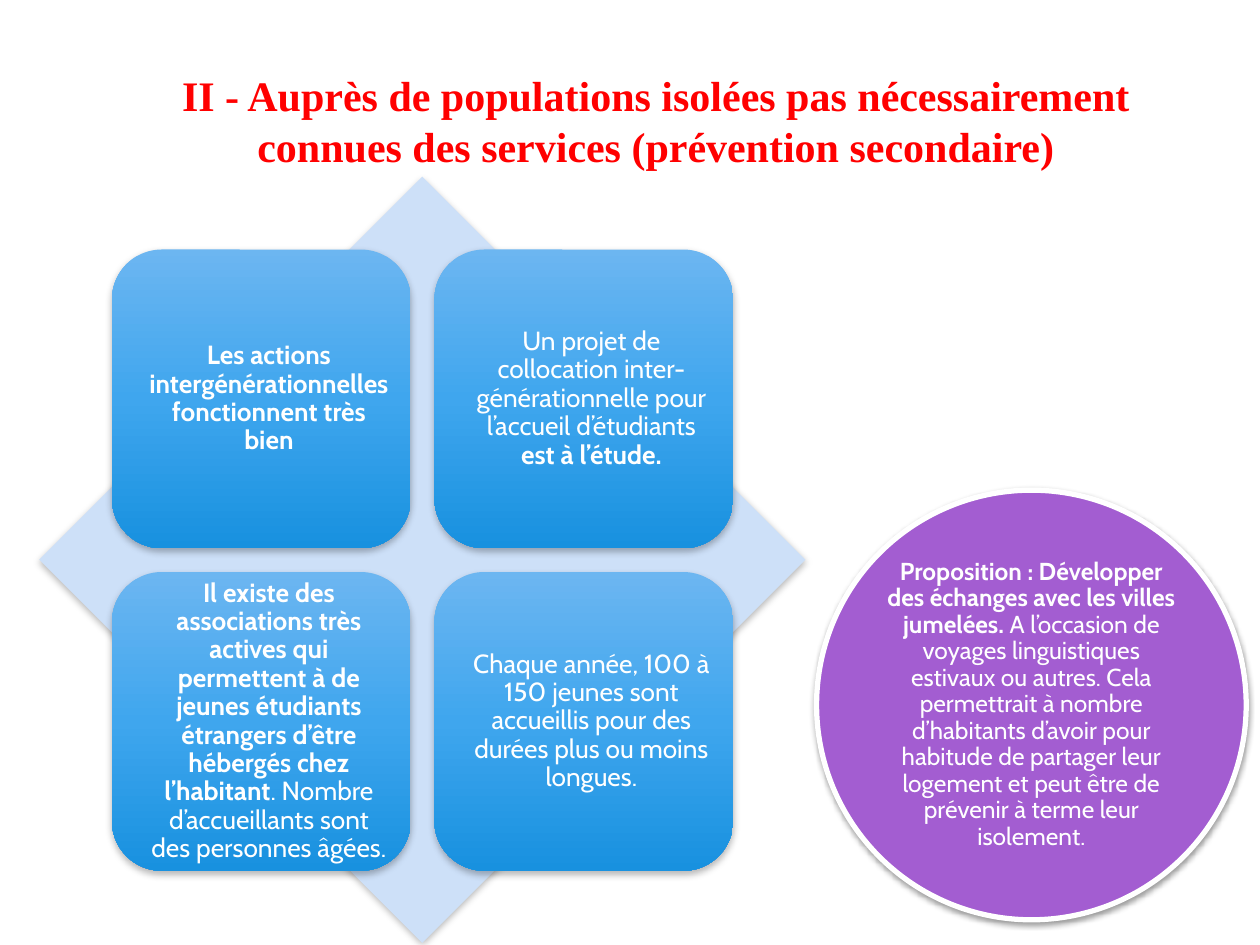
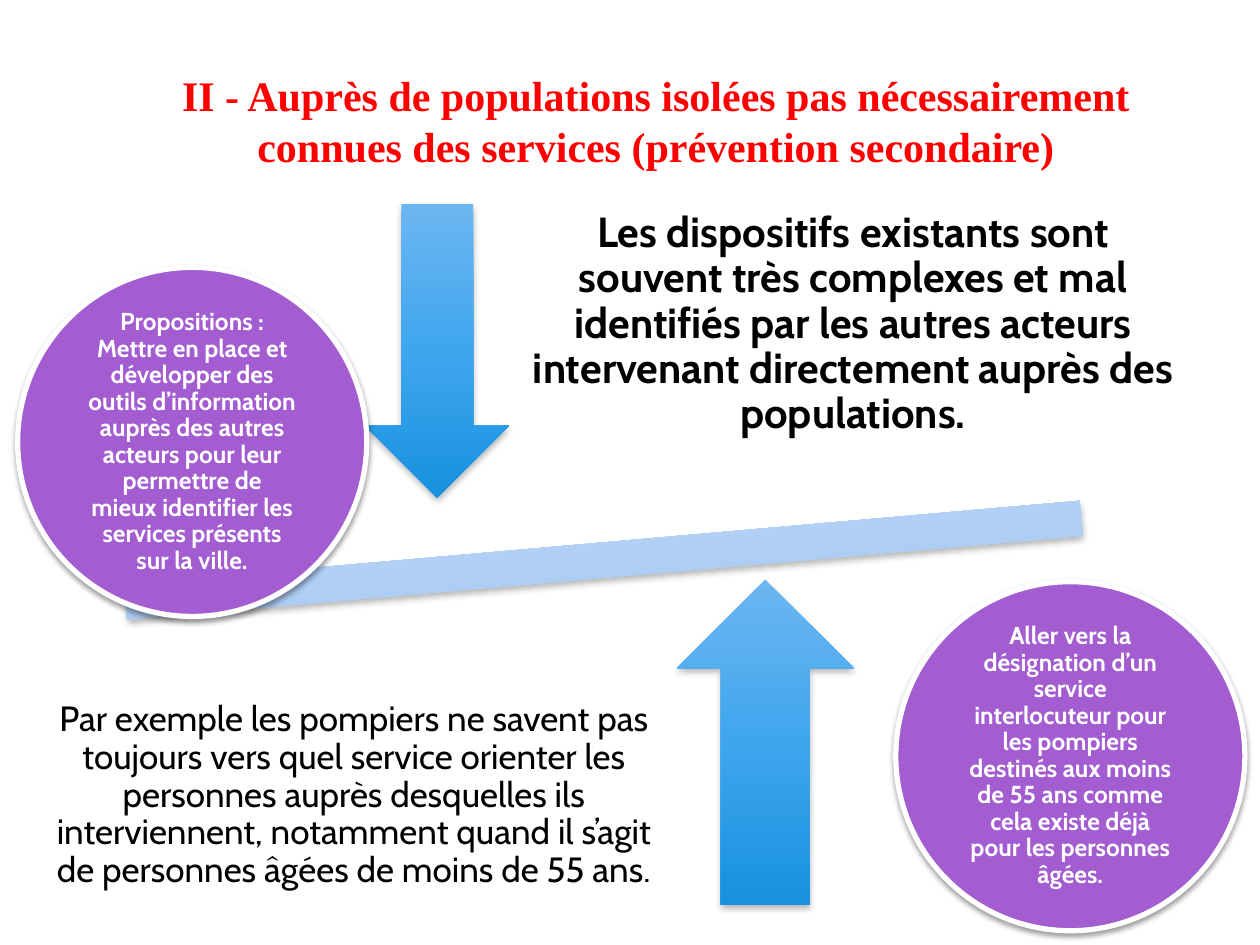
from copy import deepcopy
from dataclasses import dataclass
from typing import Optional

from lxml.etree import SubElement
from pptx import Presentation
from pptx.dml.color import RGBColor
from pptx.enum.shapes import MSO_SHAPE as Preset
from pptx.enum.text import MSO_ANCHOR as Anchor, MSO_AUTO_SIZE as AutoSize, PP_ALIGN as Align
from pptx.oxml.ns import qn
from pptx.shapes.autoshape import Shape
from pptx.slide import Slide
from pptx.util import Pt

RED = RGBColor(0xFF, 0x00, 0x00)
WHITE = RGBColor(0xFF, 0xFF, 0xFF)
BLACK = RGBColor(0x00, 0x00, 0x00)
PURPLE = RGBColor(0xA3, 0x5D, 0xD1)
PALE_BLUE = RGBColor(0xCD, 0xE0, 0xF8)
BLUE_BLEND = (RGBColor(0x6C, 0xB6, 0xF1), RGBColor(0x3F, 0xA6, 0xEE), RGBColor(0x18, 0x91, 0xDF))
PALE_BLEND = (RGBColor(0xD2, 0xE4, 0xF9), RGBColor(0xB0, 0xCF, 0xF5), RGBColor(0x90, 0xB2, 0xDB))

BODY_FONT = "Cabin"
TITLE_FONT = "Times New Roman"
TITLE = ("II - Auprès de populations isolées pas nécessairement connues des services "
         "(prévention secondaire)")


@dataclass(frozen=True)
class Area:
    left: float
    top: float
    width: float
    height: float

    def lengths(self) -> tuple[Pt, ...]:
        return tuple(Pt(value) for value in (self.left, self.top, self.width, self.height))


@dataclass(frozen=True)
class Span:
    text: str
    bold: bool = False


@dataclass(frozen=True)
class TextStyle:
    size: float
    color: RGBColor
    insets: tuple[float, float, float, float]
    space_after: float


@dataclass(frozen=True)
class Shadow:
    alpha: int
    blur: float
    distance: float


@dataclass(frozen=True)
class Circle:
    area: Area
    style: TextStyle
    spans: tuple[Span, ...]


@dataclass(frozen=True)
class Statement:
    area: Area
    style: TextStyle
    span: Span


SOFT_SHADOW = Shadow(28, 4, 2)
CIRCLE_SHADOW = Shadow(38, 3.1, 1.6)

CARD_STYLE = TextStyle(15, WHITE, (13, 13, 4.3, 13), 5.2)
LARGE_CIRCLE_STYLE = TextStyle(14, WHITE, (0, 0, 0, 0), 5.6)
SMALL_CIRCLE_STYLE = TextStyle(14, WHITE, (10.8, 1.4, 10.8, 1.4), 4.9)
HEADLINE_STYLE = TextStyle(24, BLACK, (13.7, 13.7, 13.7, 13.7), 8.4)
EXAMPLE_STYLE = TextStyle(20, BLACK, (13.7, 13.7, 13.7, 13.7), 8.4)

DIAMOND = Area(22.4, 100.9, 437.8, 437.8)
CARD_LEFT, CARD_TOP, CARD_SIZE, CARD_STEP = 64, 142.6, 170.7, 184.3
CARDS = (
    (Span("Les actions intergénérationnelles fonctionnent très bien", True),),
    (Span("Un projet de collocation inter- générationnelle pour l’accueil d’étudiants "),
     Span("est à l’étude.", True)),
    (Span("Il existe des associations très actives qui permettent à de jeunes étudiants "
          "étrangers d’être hébergés chez l’habitant", True),
     Span(". Nombre d’accueillants sont des personnes âgées.")),
    (Span("Chaque année, 100 à 150 jeunes sont accueillis pour des durées plus ou moins longues."),),
)
EXCHANGE_CIRCLE = Circle(Area(466.6, 280.1, 245.5, 245.5), LARGE_CIRCLE_STYLE, (
    Span("Proposition : Développer des échanges avec les villes jumelées. ", True),
    Span("A l’occasion de voyages linguistiques estivaux ou autres. Cela permettrait à nombre "
         "d’habitants d’avoir pour habitude de partager leur logement et peut être de prévenir "
         "à terme leur isolement."),
))

BEAM = Area(-28.1, 277.2, 745.9, 85.7)
ARROWS = (
    (Preset.DOWN_ARROW, Area(208.8, 116.6, 82.1, 167.8)),
    (Preset.UP_ARROW, Area(386.6, 331.2, 101.5, 185.8)),
)
STATEMENTS = (
    Statement(Area(288, 87.8, 398.9, 195.1), HEADLINE_STYLE, Span(
        "Les dispositifs existants sont souvent très complexes et mal identifiés par les autres "
        "acteurs intervenant directement auprès des populations.", True)),
    Statement(Area(15.8, 357.1, 373, 195.1), EXAMPLE_STYLE, Span(
        "Par exemple les pompiers ne savent pas toujours vers quel service orienter les "
        "personnes auprès desquelles ils interviennent, notamment quand il s’agit de personnes "
        "âgées de moins de 55 ans.")),
)
PROPOSAL_CIRCLES = (
    Circle(Area(10.1, 152.8, 199.5, 199.5), SMALL_CIRCLE_STYLE, (Span(
        "Propositions : Mettre en place et développer des outils d’information auprès des "
        "autres acteurs pour leur permettre de mieux identifier les services présents sur la "
        "ville.", True),)),
    Circle(Area(511.9, 332.4, 199.5, 199.5), SMALL_CIRCLE_STYLE, (Span(
        "Aller vers la désignation d’un service interlocuteur pour les pompiers destinés aux "
        "moins de 55 ans comme cela existe déjà pour les personnes âgées.", True),)),
)


def write_text(box: Shape, spans: tuple[Span, ...], style: TextStyle) -> None:
    frame = box.text_frame
    frame.word_wrap = True
    frame.vertical_anchor = Anchor.MIDDLE
    (frame.margin_left, frame.margin_top,
     frame.margin_right, frame.margin_bottom) = (Pt(inset) for inset in style.insets)
    para = frame.paragraphs[0]
    para.alignment = Align.CENTER
    para.line_spacing = 0.9
    para.space_after = Pt(style.space_after)
    for span in spans:
        run = para.add_run()
        run.text = span.text
        run.font.name = BODY_FONT
        run.font.size = Pt(style.size)
        run.font.bold = span.bold
        run.font.color.rgb = style.color


def set_shadow(shape: Shape, shadow: Shadow) -> None:
    shape.shadow.inherit = False
    effects = shape._element.spPr.find(qn("a:effectLst"))
    outer = SubElement(effects, qn("a:outerShdw"), blurRad=str(Pt(shadow.blur)),
                       dist=str(Pt(shadow.distance)), dir="5400000", rotWithShape="0")
    color = SubElement(outer, qn("a:srgbClr"), val=str(BLACK))
    SubElement(color, qn("a:alpha"), val=str(shadow.alpha * 1000))


def set_blend(shape: Shape, blend: tuple[RGBColor, ...]) -> None:
    fill = shape.fill
    fill.gradient()
    fill.gradient_angle = 270
    stop_list = shape._element.spPr.find(".//" + qn("a:gsLst"))
    stop_list.append(deepcopy(stop_list[0]))
    for index, (stop, color) in enumerate(zip(fill.gradient_stops, blend)):
        stop.position = index / (len(blend) - 1)
        stop.color.rgb = color


def add_figure(slide: Slide, preset: Preset, area: Area, color: Optional[RGBColor] = None,
               blend: tuple[RGBColor, ...] = BLUE_BLEND, shadow: Shadow = SOFT_SHADOW) -> Shape:
    shape = slide.shapes.add_shape(preset, *area.lengths())
    if color is None:
        set_blend(shape, blend)
    else:
        shape.fill.solid()
        shape.fill.fore_color.rgb = color
    shape.line.fill.background()
    set_shadow(shape, shadow)
    return shape


def add_circle(slide: Slide, circle: Circle) -> None:
    shape = add_figure(slide, Preset.OVAL, circle.area, PURPLE, shadow=CIRCLE_SHADOW)
    shape.line.color.rgb = WHITE
    shape.line.width = Pt(3)
    write_text(shape, circle.spans, circle.style)


def add_page(deck: Presentation) -> Slide:
    page = deck.slides.add_slide(deck.slide_layouts[5])
    title = page.shapes.title
    title.left, title.top, title.width, title.height = Area(77.8, 36, 594, 64.8).lengths()
    frame = title.text_frame
    frame.auto_size = AutoSize.NONE
    frame.word_wrap = True
    frame.vertical_anchor = Anchor.TOP
    para = frame.paragraphs[0]
    para.alignment = Align.CENTER
    para.line_spacing = Pt(29)
    run = para.add_run()
    run.text = TITLE
    run.font.name = TITLE_FONT
    run.font.size = Pt(24)
    run.font.bold = True
    run.font.color.rgb = RED
    return page


def build_isolation_page(deck: Presentation) -> None:
    page = add_page(deck)
    add_figure(page, Preset.DIAMOND, DIAMOND, PALE_BLUE)
    for index, spans in enumerate(CARDS):
        row, column = divmod(index, 2)
        area = Area(CARD_LEFT + column * CARD_STEP, CARD_TOP + row * CARD_STEP,
                    CARD_SIZE, CARD_SIZE)
        card = add_figure(page, Preset.ROUNDED_RECTANGLE, area)
        card.adjustments[0] = 0.167
        write_text(card, spans, CARD_STYLE)
    add_circle(page, EXCHANGE_CIRCLE)


def build_balance_page(deck: Presentation) -> None:
    page = add_page(deck)
    beam = add_figure(page, Preset.MATH_MINUS, BEAM, blend=PALE_BLEND)
    beam.adjustments[0] = 0.235
    beam.rotation = 355
    for preset, area in ARROWS:
        add_figure(page, preset, area)
    for statement in STATEMENTS:
        box = page.shapes.add_textbox(*statement.area.lengths())
        write_text(box, (statement.span,), statement.style)
    for circle in PROPOSAL_CIRCLES:
        add_circle(page, circle)


def main() -> None:
    deck = Presentation()
    deck.slide_width, deck.slide_height = Pt(720), Pt(540)
    build_isolation_page(deck)
    build_balance_page(deck)
    deck.save("out.pptx")


if __name__ == "__main__":
    main()
